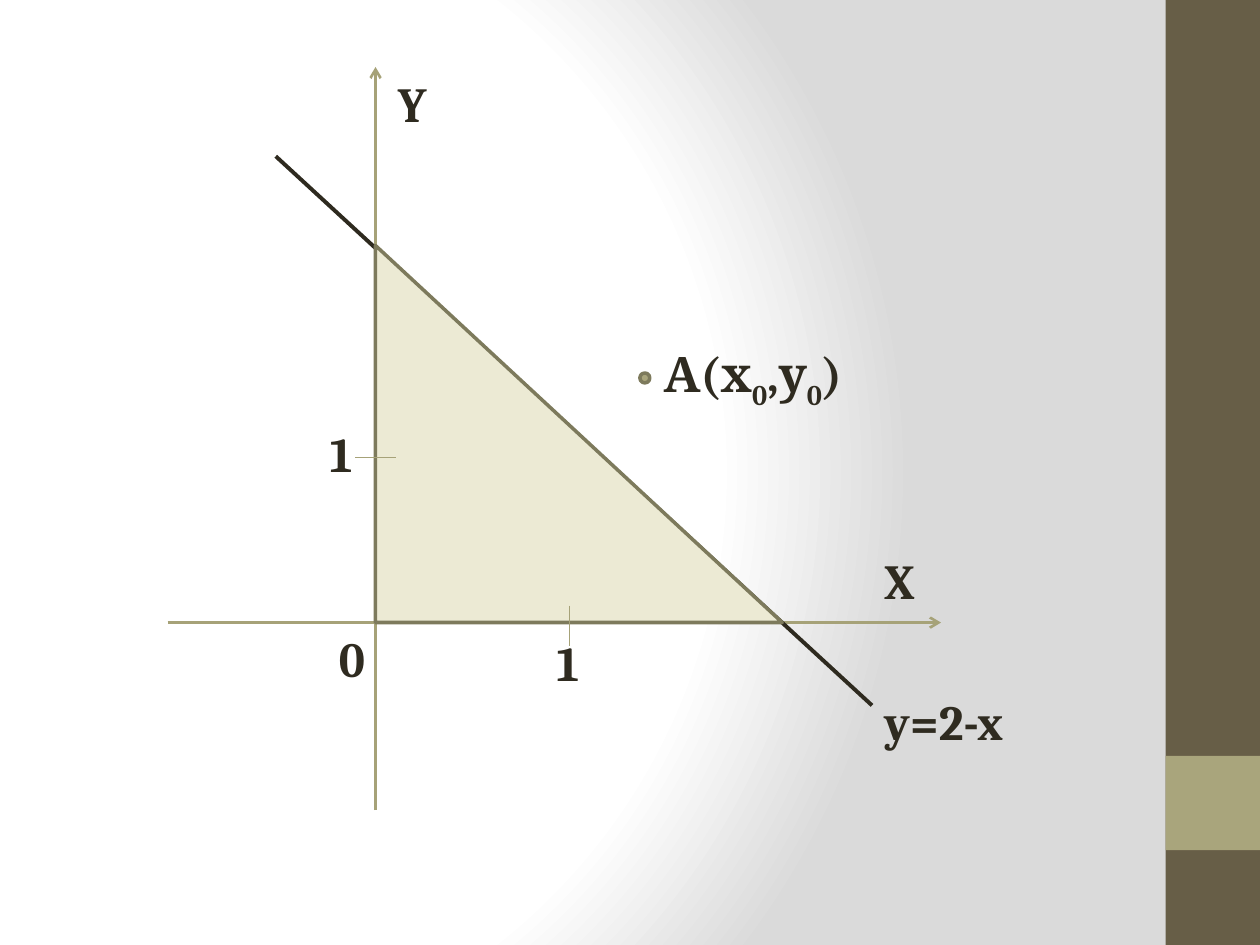
from lxml import etree
from pptx import Presentation, util as u
from pptx.dml.color import RGBColor
from pptx.enum import shapes, text
from pptx.oxml import parse_xml
from pptx.oxml.ns import nsdecls, qn

COLORS = {
    "band": "675E47", "accent": "A9A57C", "axis": "A6A278", "graph": "2E2A1F",
    "text": "2F2B20", "area": "ECEAD4", "outline": "7D7A5C",
    "light": "FFFFFF", "shade": "DADADA",
}
FONT, FONT_SIZE = "Cambria", 28
LABEL_HEIGHT = 1.45

# Diagram geometry in centimetres
ORIGIN_X, ORIGIN_Y = 7.57, 12.55
TRIANGLE_WIDTH, TRIANGLE_HEIGHT = 8.2, 7.6
HALF_TICK = 0.41
TICK_X, TICK_Y = 11.48, 9.22
TICK_MIDDLE = 12.62

# Side band: left, top, width, height, color
BANDS = [(23.5, 0, 1.9, 19.05, "band"), (23.5, 15.24, 1.9, 1.9, "accent")]

# Lines: start, end, color, width in points, arrowhead
AXES_AND_GRAPH = [
    ((ORIGIN_X, 16.33), (ORIGIN_X, 1.35), "axis", 1.5, True),
    ((3.38, ORIGIN_Y), (18.97, ORIGIN_Y), "axis", 1.5, True),
    ((5.56, 3.15), (17.58, 14.22), "graph", 2.25, False),
]
TICKS = [
    ((TICK_X, TICK_MIDDLE - HALF_TICK), (TICK_X, TICK_MIDDLE + HALF_TICK), "axis", 1, False),
    ((ORIGIN_X - HALF_TICK, TICK_Y), (ORIGIN_X + HALF_TICK, TICK_Y), "axis", 1, False),
]

# Labels: left, top, width, runs of (text, is subscript)
LABELS = [
    (7.77, 1.35, 2.0, [("Y", False)]),
    (17.58, 10.97, 2.0, [("X", False)]),
    (6.58, 12.55, 1.0, [("0", False)]),
    (10.97, 12.62, 1.0, [("1", False)]),
    (6.4, 8.41, 1.0, [("1", False)]),
    (17.58, 13.82, 5.18, [("y=2-x", False)]),
]
POINT_LABEL = (13.13, 6.81, 4.88, [
    ("А(х", False), ("0", True), (",у", False), ("0", True), (")", False)])


def color(name):
    return RGBColor.from_string(COLORS[name])


def add_shape(parent, kind, left, top, width, height, fill, line=None):
    shape = parent.add_shape(kind, *map(u.Cm, (left, top, width, height)))
    shape.shadow.inherit = False
    shape.fill.solid()
    shape.fill.fore_color.rgb = color(fill)
    if line:
        shape.line.color.rgb = color(line)
        shape.line.width = u.Pt(2)
    else:
        shape.line.fill.background()


def add_line(parent, start, end, line_color, width, arrow):
    connector = parent.add_connector(
        shapes.MSO_CONNECTOR.STRAIGHT, *map(u.Cm, (*start, *end)))
    connector.line.color.rgb = color(line_color)
    connector.line.width = u.Pt(width)
    if arrow:
        etree.SubElement(connector.line._get_or_add_ln(), qn("a:tailEnd"), type="arrow")
    etree.SubElement(connector._element.spPr, qn("a:effectLst"))


def add_label(parent, left, top, width, runs):
    box = parent.add_textbox(*map(u.Cm, (left, top, width, LABEL_HEIGHT)))
    frame = box.text_frame
    frame.word_wrap = True
    frame.auto_size = text.MSO_AUTO_SIZE.SHAPE_TO_FIT_TEXT
    paragraph = frame.paragraphs[0]
    for content, subscript in runs:
        run = paragraph.add_run()
        run.text = content
        run.font.name = FONT
        run.font.size = u.Pt(FONT_SIZE)
        run.font.bold = True
        run.font.color.rgb = color("text")
        if subscript:
            run.font._element.set("baseline", "-25000")


def set_background(slide):
    slide.background.fill.solid()
    solid = slide._element.find(".//" + qn("p:bgPr")).find(qn("a:solidFill"))
    stops = [(0, "light"), (75, "light"), (100, "shade")]
    stop_xml = "".join(
        f'<a:gs pos="{position * 1000}"><a:srgbClr val="{COLORS[name]}"/></a:gs>'
        for position, name in stops)
    solid.getparent().replace(solid, parse_xml(
        f'<a:gradFill {nsdecls("a")} rotWithShape="1"><a:gsLst>{stop_xml}</a:gsLst>'
        '<a:path path="circle"><a:fillToRect l="20000" t="50000" r="100000" b="50000"/>'
        '</a:path></a:gradFill>'))


def main():
    presentation = Presentation()
    presentation.slide_width, presentation.slide_height = u.Cm(25.4), u.Cm(19.05)
    slide = presentation.slides.add_slide(presentation.slide_layouts[6])
    set_background(slide)

    # Side band
    for *box, fill in BANDS:
        add_shape(slide.shapes, shapes.MSO_SHAPE.RECTANGLE, *box, fill)

    # Coordinate system with the shaded triangle
    diagram = slide.shapes.add_group_shape().shapes
    for line in AXES_AND_GRAPH:
        add_line(diagram, *line)
    add_shape(diagram, shapes.MSO_SHAPE.RIGHT_TRIANGLE,
              ORIGIN_X, ORIGIN_Y - TRIANGLE_HEIGHT, TRIANGLE_WIDTH, TRIANGLE_HEIGHT,
              "area", "outline")
    for label in LABELS:
        add_label(diagram, *label)
    for tick in TICKS:
        add_line(diagram, *tick)

    # Point A
    add_shape(slide.shapes, shapes.MSO_SHAPE.OVAL, 12.9, 7.52, 0.2, 0.2, "accent", "outline")
    add_label(slide.shapes, *POINT_LABEL)

    presentation.save("out.pptx")


if __name__ == "__main__":
    main()
